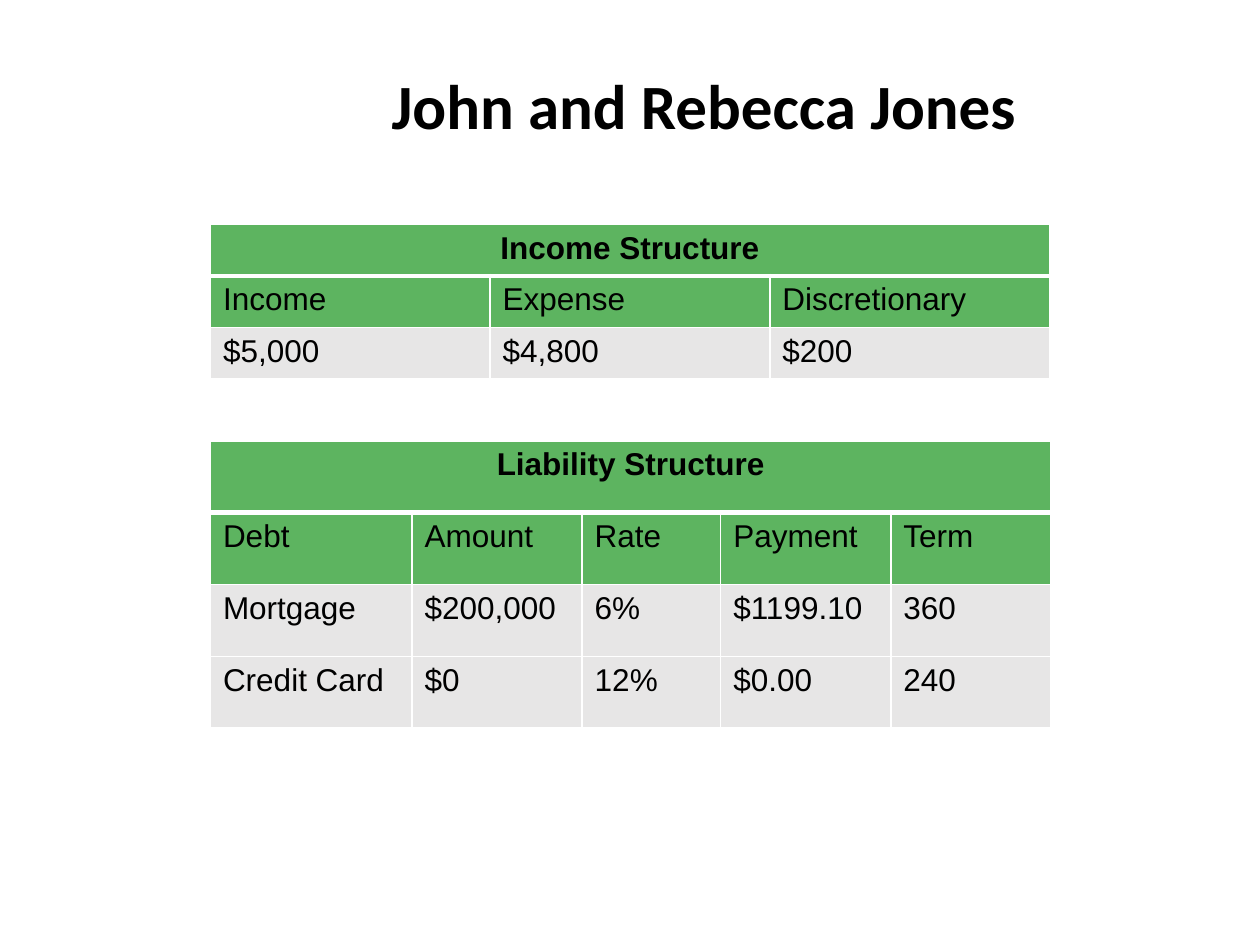
"""Build a client summary page with income and liability tables."""
from dataclasses import dataclass

import pptx
import pptx.dml.color
import pptx.enum.text
import pptx.oxml
import pptx.oxml.ns
import pptx.util
from pptx.util import Inches

GREEN, GREY, WHITE, BLACK = "5DB460", "E7E6E6", "FFFFFF", "000000"
TABLE_LEFT = 1.67
BODY_OPACITY = 30


@dataclass
class FinanceTable:
    title: str
    top: float
    row_height: float
    widths: list[float]
    rows: list[list[str]]


TABLES = [
    FinanceTable(
        "Liability Structure", 3.5, 0.57, [1.6, 1.35, 1.1, 1.35, 1.27],
        [["Debt", "Amount", "Rate", "Payment", "Term"],
         ["Mortgage", "$200,000", "6%", "$1199.10", "360"],
         ["Credit Card", "$0", "12%", "$0.00", "240"]],
    ),
    FinanceTable(
        "Income Structure", 1.78, 0.41, [2.22, 2.22, 2.22],
        [["Income", "Expense", "Discretionary"],
         ["$5,000", "$4,800", "$200"]],
    ),
]


def color(value: str) -> pptx.dml.color.RGBColor:
    return pptx.dml.color.RGBColor.from_string(value)


def format_text(frame, size: int, name: str, bold: bool) -> None:
    for paragraph in frame.paragraphs:
        for span in paragraph.runs:
            span.font.size = pptx.util.Pt(size)
            span.font.name = name
            span.font.bold = bold
            span.font.color.rgb = color(BLACK)


def add_borders(cell, top: int, bottom: int) -> None:
    properties = cell._tc.get_or_add_tcPr()
    for side, points in (("L", 1), ("R", 1), ("T", top), ("B", bottom)):
        properties.append(pptx.oxml.parse_xml(
            f'<a:ln{side} {pptx.oxml.ns.nsdecls("a")} w="{pptx.util.Pt(points)}">'
            f'<a:solidFill><a:srgbClr val="{WHITE}"/></a:solidFill></a:ln{side}>'
        ))


def fill_cell(cell, value: str, opacity: int = 100) -> None:
    cell.fill.solid()
    cell.fill.fore_color.rgb = color(value)
    if opacity < 100:
        shade = cell._tc.tcPr.find(".//" + pptx.oxml.ns.qn("a:srgbClr"))
        shade.append(pptx.oxml.parse_xml(
            f'<a:alpha {pptx.oxml.ns.nsdecls("a")} val="{opacity * 1000}"/>'
        ))


def add_finance_table(page, data: FinanceTable) -> None:
    columns = len(data.widths)
    title_row = [data.title] + [""] * (columns - 1)
    rows = [title_row, *data.rows]
    table = page.shapes.add_table(
        len(rows), columns, Inches(TABLE_LEFT), Inches(data.top),
        Inches(sum(data.widths)), Inches(data.row_height * len(rows)),
    ).table
    for column, width in zip(table.columns, data.widths):
        column.width = Inches(width)
    for row_index, values in enumerate(rows):
        table.rows[row_index].height = Inches(data.row_height)
        for column_index, value in enumerate(values):
            cell = table.cell(row_index, column_index)
            cell.text_frame.text = value
            format_text(cell.text_frame, 18, "Arial", row_index == 0)
            add_borders(cell, 3 if row_index == 1 else 1, 3 if row_index == 0 else 1)
            if row_index < 2:
                fill_cell(cell, GREEN)
            else:
                fill_cell(cell, GREY, BODY_OPACITY)
    heading = table.cell(0, 0)
    heading.merge(table.cell(0, columns - 1))
    heading.text_frame.paragraphs[0].alignment = pptx.enum.text.PP_ALIGN.CENTER


def add_title(page, text: str) -> None:
    box = page.shapes.add_textbox(Inches(3.01), Inches(0.48), Inches(5.22), Inches(0.71))
    box.text_frame.text = text
    box.text_frame.word_wrap = False
    box.text_frame.auto_size = pptx.enum.text.MSO_AUTO_SIZE.SHAPE_TO_FIT_TEXT
    format_text(box.text_frame, 36, "Calibri", True)


def main() -> None:
    deck = pptx.Presentation()
    deck.slide_width, deck.slide_height = Inches(10), Inches(7.5)
    page = deck.slides.add_slide(deck.slide_layouts[6])
    add_title(page, "John and Rebecca Jones")
    for data in TABLES:
        add_finance_table(page, data)
    deck.save("out.pptx")


if __name__ == "__main__":
    main()
